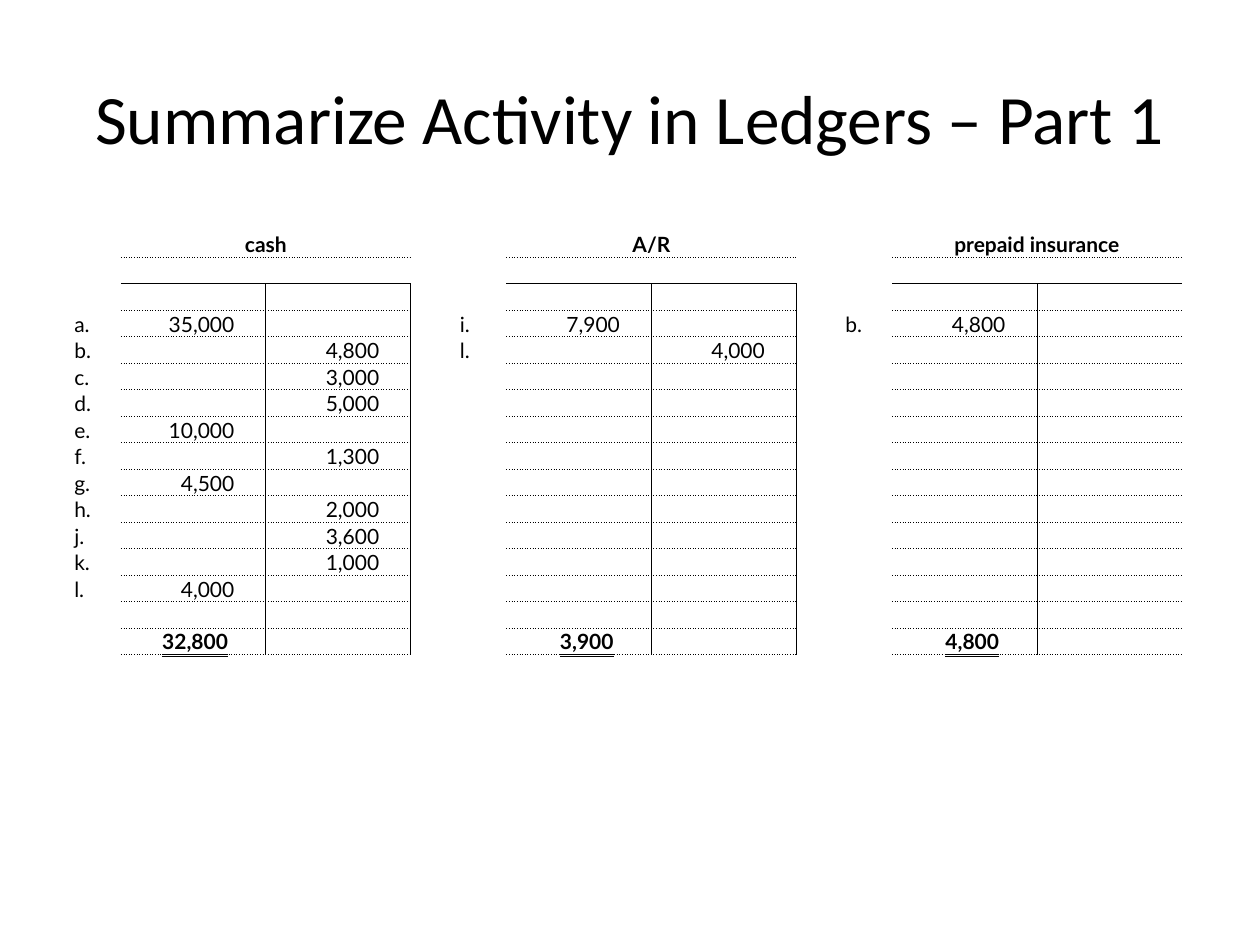
import dataclasses

import lxml.etree
import pptx
import pptx.dml.color
import pptx.enum.text
import pptx.oxml.ns
import pptx.util

Inches = pptx.util.Inches
Pt = pptx.util.Pt
Align = pptx.enum.text.PP_ALIGN
Anchor = pptx.enum.text.MSO_ANCHOR
qn = pptx.oxml.ns.qn


@dataclasses.dataclass
class Theme:
    ink: str = "000000"
    title_font: str = "Calibri"
    body_font: str = "Lato"
    title_size: float = 39.6
    body_size: float = 12
    line_width: float = 0.5
    plain_table: str = "{2D5ABB26-0587-4C30-8999-92F81FD0307C}"


ROW_COUNT = 16
FIRST_ENTRY_ROW = 3
ACCOUNT_STEP = 4
LABEL_WIDTH, AMOUNT_WIDTH = 0.38, 1.15
AMOUNT_MARGIN = 0.25
TOTAL_TAB = 0.84

ACCOUNTS = [
    ("cash", "32,800", [
        ("a.", "35,000", ""), ("b.", "", "4,800"), ("c.", "", "3,000"),
        ("d.", "", "5,000"), ("e.", "10,000", ""), ("f.", "", "1,300"),
        ("g.", "4,500", ""), ("h.", "", "2,000"), ("j.", "", "3,600"),
        ("k.", "", "1,000"), ("l.", "4,000", ""),
    ]),
    ("A/R", "3,900", [("i.", "7,900", ""), ("l.", "", "4,000")]),
    ("prepaid insurance", "4,800", [("b.", "4,800", "")]),
]


def apply(target, values):
    for name, value in values.items():
        setattr(target, name, value)


class LedgerSlide:
    def __init__(self, presentation, theme):
        self.theme = theme
        self.slide = presentation.slides.add_slide(presentation.slide_layouts[6])

    def add_text(self, paragraph, text, font, size, **extra):
        run = paragraph.add_run()
        run.text = text
        apply(run.font, {"name": font, "size": Pt(size), **extra})
        run.font.color.rgb = pptx.dml.color.RGBColor.from_string(self.theme.ink)

    def title(self, text, left, top, width, height):
        shape = self.slide.shapes.add_textbox(*map(Inches, (left, top, width, height)))
        apply(shape.text_frame, {"word_wrap": True, "vertical_anchor": Anchor.MIDDLE})
        paragraph = shape.text_frame.paragraphs[0]
        paragraph.alignment = Align.CENTER
        self.add_text(paragraph, text, self.theme.title_font, self.theme.title_size)

    def table(self, left, top, height, widths):
        frame = self.slide.shapes.add_table(
            ROW_COUNT, len(widths), Inches(left), Inches(top),
            Inches(sum(widths)), Inches(height))
        table = frame.table
        apply(table, {"first_row": False, "horz_banding": False})
        table._tbl.tblPr.find(qn("a:tableStyleId")).text = self.theme.plain_table
        for column, width in zip(table.columns, widths):
            column.width = Inches(width)
        for row in table.rows:
            row.height = int(Inches(height) / ROW_COUNT)
        for cell in table.iter_cells():
            apply(cell, {
                "margin_left": Inches(0.01), "margin_right": Inches(0.01),
                "margin_top": Inches(0.01), "margin_bottom": 0,
                "vertical_anchor": Anchor.BOTTOM,
            })
            cell.fill.background()
            end = lxml.etree.SubElement(
                cell.text_frame.paragraphs[0]._p, qn("a:endParaRPr"))
            end.set("sz", str(int(self.theme.body_size * 100)))
        return table

    def borders(self, cell, **dashes):
        properties = cell._tc.get_or_add_tcPr()
        sides = [side for side in ("L", "R", "T", "B") if side in dashes]
        for index, side in enumerate(sides):
            line = lxml.etree.Element(
                qn(f"a:ln{side}"), w=str(Pt(self.theme.line_width)))
            fill = lxml.etree.SubElement(line, qn("a:solidFill"))
            lxml.etree.SubElement(fill, qn("a:srgbClr"), val=self.theme.ink)
            lxml.etree.SubElement(line, qn("a:prstDash"), val=dashes[side])
            properties.insert(index, line)

    def cell_text(self, cell, text, alignment=Align.LEFT, margin=0.01, **extra):
        if text:
            cell.margin_right = Inches(margin)
            paragraph = cell.text_frame.paragraphs[0]
            paragraph.alignment = alignment
            self.add_text(paragraph, text, self.theme.body_font,
                          self.theme.body_size, **extra)

    def total(self, cell, amount):
        self.cell_text(cell, "\t" + amount, bold=True,
                       underline=pptx.enum.text.MSO_UNDERLINE.DOUBLE_LINE)
        properties = cell.text_frame.paragraphs[0]._p.get_or_add_pPr()
        tabs = lxml.etree.SubElement(properties, qn("a:tabLst"))
        lxml.etree.SubElement(
            tabs, qn("a:tab"), pos=str(Inches(TOTAL_TAB)), algn="r")

    def account(self, table, label_column, name, total, entries):
        debit, credit = label_column + 1, label_column + 2
        for row in range(ROW_COUNT):
            rules = {"B": "solid" if row == 1 else "dot"}
            if row:
                rules["T"] = "solid" if row == 2 else "dot"
            for column, inner_side in ((debit, "R"), (credit, "L")):
                divider = {inner_side: "solid"} if row >= 2 else {}
                self.borders(table.cell(row, column), **rules, **divider)
        heading = table.cell(0, debit)
        heading.merge(table.cell(0, credit))
        self.cell_text(heading, name, Align.CENTER, bold=True)
        for row, (label, *amounts) in enumerate(entries, FIRST_ENTRY_ROW):
            self.cell_text(table.cell(row, label_column), label)
            for column, amount in zip((debit, credit), amounts):
                self.cell_text(table.cell(row, column), amount,
                               Align.RIGHT, AMOUNT_MARGIN)
        self.total(table.cell(ROW_COUNT - 1, debit), total)


def main():
    presentation = pptx.Presentation()
    apply(presentation, {"slide_width": Inches(10), "slide_height": Inches(7.5)})
    ledger = LedgerSlide(presentation, Theme())
    ledger.title("Summarize Activity in Ledgers – Part 1", 0.5, 0.3, 9, 1.25)
    account_widths = [LABEL_WIDTH, AMOUNT_WIDTH, AMOUNT_WIDTH, LABEL_WIDTH]
    widths = (account_widths * len(ACCOUNTS))[:-1]
    table = ledger.table(0.58, 1.83, 3.37, widths)
    for index, account in enumerate(ACCOUNTS):
        ledger.account(table, index * ACCOUNT_STEP, *account)
    presentation.save("out.pptx")


if __name__ == "__main__":
    main()
